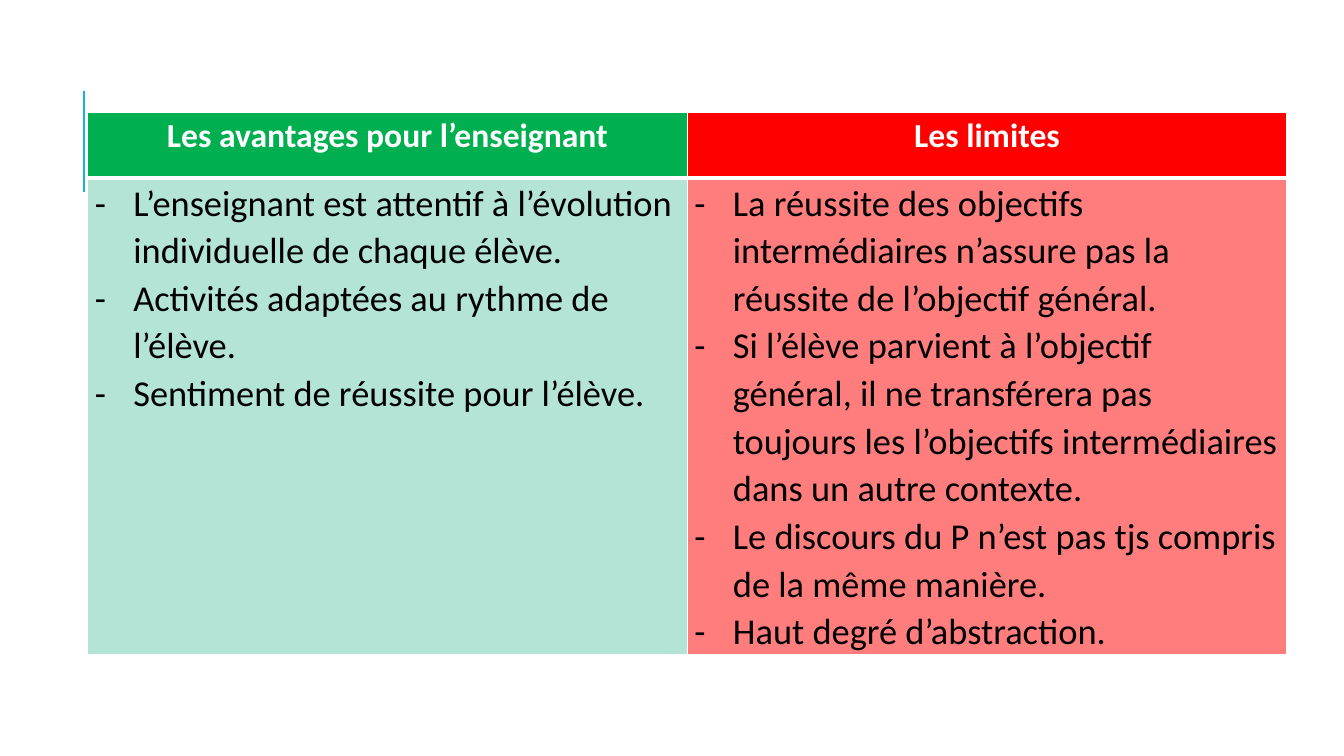
"""Build a slide that weighs the teacher's advantages against the limits."""
from pptx import Presentation
from pptx.dml.color import RGBColor
from pptx.enum.shapes import MSO_CONNECTOR as Connector
from pptx.enum.text import PP_ALIGN as Align
from pptx.oxml.ns import qn
from pptx.util import Cm, Pt
from lxml.etree import SubElement, Element

COLUMNS = [
    ("Les avantages pour l’enseignant", "00B050", "B3E4D6", [
        "L’enseignant est attentif à l’évolution individuelle de chaque élève.",
        "Activités adaptées au rythme de l’élève.",
        "Sentiment de réussite pour l’élève.",
    ]),
    ("Les limites", "FF0000", "FF7D7D", [
        "La réussite des objectifs intermédiaires n’assure pas la réussite de l’objectif général.",
        "Si l’élève parvient à l’objectif général, il ne transférera pas toujours "
        "les l’objectifs intermédiaires dans un autre contexte.",
        "Le discours du P n’est pas tjs compris de la même manière.",
        "Haut degré d’abstraction.",
    ]),
]


def color(value):
    """Turn a hex string into a colour."""
    return RGBColor.from_string(value)


def add_accent_line(slide):
    """Draw the thin vertical line beside the table."""
    line = slide.shapes.add_connector(Connector.STRAIGHT, Cm(2.11), Cm(4.83), Cm(2.11), Cm(2.29))
    line.line.color.rgb = color("1CADE4")
    line.line.width = Pt(1.5)
    SubElement(line._element.spPr, qn("a:effectLst"))


def set_borders(cell, bottom):
    """Give a cell white borders, with its own bottom width in points."""
    properties = cell._tc.get_or_add_tcPr()
    widths = {"a:lnL": 1, "a:lnR": 1, "a:lnT": 1, "a:lnB": bottom}
    for position, (side, width) in enumerate(widths.items()):
        border = Element(qn(side), w=str(Pt(width)))
        fill = SubElement(border, qn("a:solidFill"))
        SubElement(fill, qn("a:srgbClr"), val="FFFFFF")
        properties.insert(position, border)


def add_dash(para):
    """Give a paragraph a hanging dash."""
    properties = para._p.get_or_add_pPr()
    properties.set("marL", str(Cm(0.97)))
    properties.set("indent", str(-Cm(0.97)))
    SubElement(properties, qn("a:buFont"), typeface="Calibri")
    SubElement(properties, qn("a:buChar"), char="-")


def style_paragraph(para, size, text_color, bold):
    """Set the spacing of a paragraph and the font of its runs."""
    para.line_spacing = 1.07
    for span in para.runs:
        span.font.name = "Calibri"
        span.font.size = Pt(size)
        span.font.bold = bold
        span.font.color.rgb = color(text_color)


def style_cell(cell, fill, bottom):
    """Set the fill, margins and borders of a cell."""
    cell.fill.solid()
    cell.fill.fore_color.rgb = color(fill)
    cell.margin_left = cell.margin_right = Cm(0.18)
    cell.margin_top = cell.margin_bottom = 0
    set_borders(cell, bottom)


def fill_header(cell, text, fill):
    """Write a column heading."""
    style_cell(cell, fill, 3)
    cell.text_frame.text = text
    para = cell.text_frame.paragraphs[0]
    para.alignment = Align.CENTER
    para.space_after = Pt(8)
    style_paragraph(para, 24, "FFFFFF", True)


def fill_list(cell, items, fill):
    """Write the dashed list of a column."""
    style_cell(cell, fill, 1)
    cell.text_frame.text = "\n".join(items)
    for para in cell.text_frame.paragraphs:
        add_dash(para)
        style_paragraph(para, 26, "000000", False)


def add_comparison(slide):
    """Add the table of advantages and limits."""
    frame = slide.shapes.add_table(2, len(COLUMNS), Cm(2.21), Cm(2.84), Cm(30.22), Cm(13.63))
    table = frame.table
    table.rows[0].height = Cm(1.65)
    table.rows[1].height = Cm(11.98)
    for index, (heading, header_fill, list_fill, items) in enumerate(COLUMNS):
        table.columns[index].width = Cm(15.11)
        fill_header(table.cell(0, index), heading, header_fill)
        fill_list(table.cell(1, index), items, list_fill)


def main():
    """Build and save the deck."""
    deck = Presentation()
    deck.slide_width, deck.slide_height = Cm(33.87), Cm(19.05)
    slide = deck.slides.add_slide(deck.slide_layouts[6])
    add_accent_line(slide)
    add_comparison(slide)
    deck.save("out.pptx")


if __name__ == "__main__":
    main()
